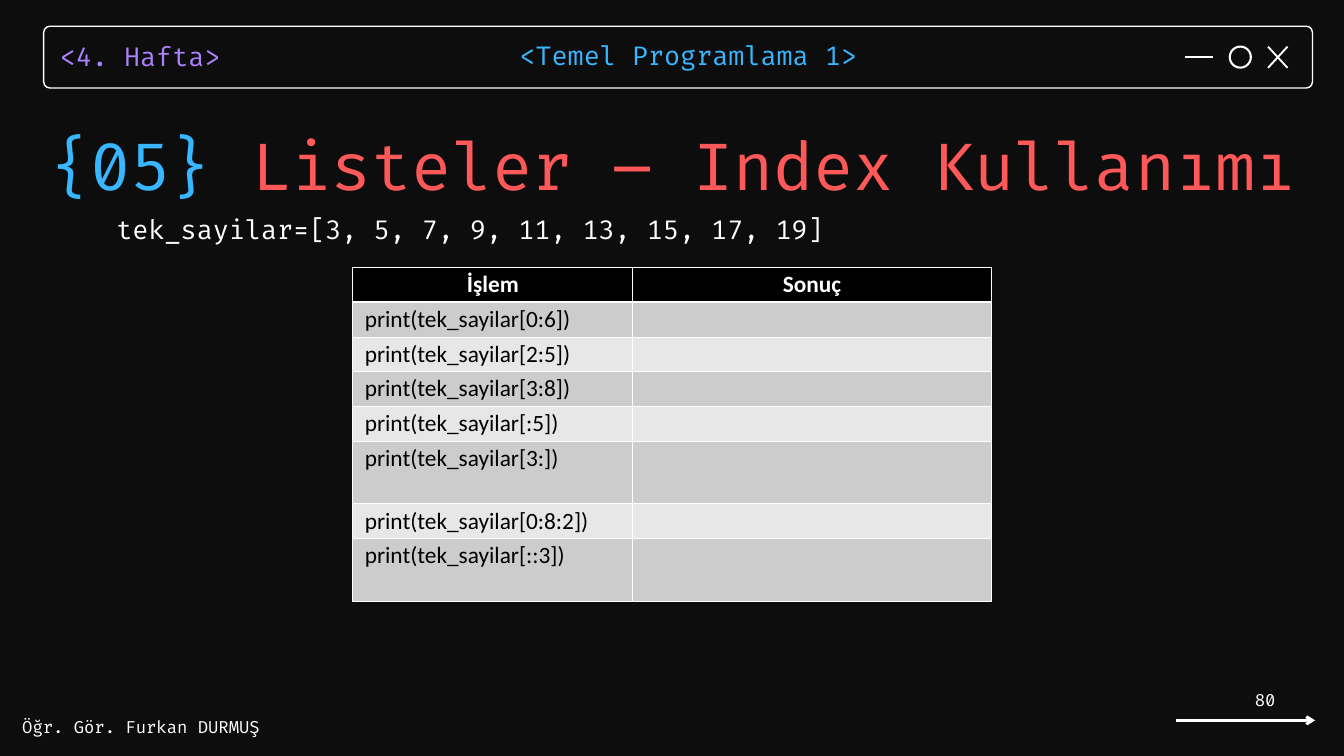
from lxml.etree import SubElement
from pptx import Presentation
from pptx.dml.color import RGBColor
from pptx.enum.shapes import MSO_CONNECTOR, MSO_SHAPE
from pptx.enum.text import MSO_ANCHOR, PP_ALIGN
from pptx.oxml.ns import qn
from pptx.util import Pt

BACKGROUND = RGBColor(0x0D, 0x0D, 0x0D)
WHITE = RGBColor(0xFF, 0xFF, 0xFF)
BLACK = RGBColor(0x00, 0x00, 0x00)
BLUE = RGBColor(0x38, 0xB6, 0xFF)
PURPLE = RGBColor(0xAB, 0x81, 0xFF)
RED = RGBColor(0xFF, 0x58, 0x58)
DARK_BAND = RGBColor(0xCC, 0xCC, 0xCC)
LIGHT_BAND = RGBColor(0xE7, 0xE7, 0xE7)


class SlideBuilder:
    code_font = "Fira Code"
    table_font = "Calibri"
    table_size = 25

    def __init__(self, slide):
        self.slide = slide
        slide.background.fill.solid()
        slide.background.fill.fore_color.rgb = BACKGROUND

    def text(self, left, top, width, height, runs, size,
             spacing=None, align=PP_ALIGN.LEFT, anchor=MSO_ANCHOR.TOP):
        """Add one line of text; runs holds (text, colour) pairs."""
        shape = self.slide.shapes.add_textbox(Pt(left), Pt(top), Pt(width), Pt(height))
        frame = shape.text_frame
        frame.word_wrap = True
        frame.vertical_anchor = anchor
        frame.margin_left = frame.margin_right = 0
        frame.margin_top = frame.margin_bottom = 0
        paragraph = frame.paragraphs[0]
        paragraph.alignment = align
        if spacing:
            paragraph.line_spacing = Pt(spacing)
        paragraph.font.name = self.code_font
        paragraph.font.size = Pt(size)
        for content, color in runs:
            run = paragraph.add_run()
            run.text = content
            run.font.color.rgb = color

    def outline(self, kind, left, top, width, height, weight):
        shape = self.slide.shapes.add_shape(kind, Pt(left), Pt(top), Pt(width), Pt(height))
        shape.shadow.inherit = False
        shape.fill.background()
        shape.line.color.rgb = WHITE
        shape.line.width = Pt(weight)
        return shape

    def line(self, x1, y1, x2, y2, weight, arrow=False):
        connector = self.slide.shapes.add_connector(
            MSO_CONNECTOR.STRAIGHT, Pt(x1), Pt(y1), Pt(x2), Pt(y2))
        connector.line.color.rgb = WHITE
        connector.line.width = Pt(weight)
        if arrow:
            SubElement(connector.line._get_or_add_ln(), qn("a:tailEnd"), type="arrow")
        SubElement(connector._element.spPr, qn("a:effectLst"))

    def cell(self, cell, content, fill, header, weights):
        """Fill a table cell; weights are left, right, top and bottom borders."""
        properties = cell._tc.get_or_add_tcPr()
        for side, weight in zip("LRTB", weights):
            border = SubElement(properties, qn(f"a:ln{side}"), w=str(Pt(weight)))
            color = SubElement(SubElement(border, qn("a:solidFill")), qn("a:srgbClr"))
            color.set("val", str(WHITE))
        cell.fill.solid()
        cell.fill.fore_color.rgb = fill
        cell.margin_left = Pt(7.2 if header else 12.85)
        cell.margin_top = cell.margin_bottom = Pt(3.3)
        cell.text = content
        paragraph = cell.text_frame.paragraphs[0]
        paragraph.alignment = PP_ALIGN.CENTER if header else PP_ALIGN.LEFT
        paragraph.font.name = self.table_font
        paragraph.font.size = Pt(self.table_size)
        paragraph.font.bold = header
        paragraph.font.color.rgb = WHITE if header else BLACK

    def table(self, left, top, widths, heights, rows):
        table = self.slide.shapes.add_table(
            len(rows), len(widths), Pt(left), Pt(top),
            Pt(sum(widths)), Pt(sum(heights))).table
        for column, width in zip(table.columns, widths):
            column.width = Pt(width)
        for index, (row, height) in enumerate(zip(rows, heights)):
            table.rows[index].height = Pt(height)
            header = index == 0
            fill = BLACK if header else (DARK_BAND if index % 2 else LIGHT_BAND)
            weights = (1, 1, 3 if index == 1 else 1, 3 if header else 1)
            for position, content in enumerate(row):
                self.cell(table.cell(index, position), content, fill, header, weights)


def main():
    presentation = Presentation()
    presentation.slide_width, presentation.slide_height = Pt(1440), Pt(810)
    builder = SlideBuilder(presentation.slides.add_slide(presentation.slide_layouts[6]))

    # Window bar with its buttons
    frame = builder.outline(MSO_SHAPE.ROUNDED_RECTANGLE, 46.8, 28.1, 1359.4, 66.2, 1.5)
    frame.adjustments[0] = 0.1
    builder.line(1358.6, 50, 1379.5, 72.7, 2)
    builder.line(1379.5, 50, 1358.6, 72.7, 2)
    builder.line(1270, 61.2, 1299.6, 61.2, 2)
    builder.outline(MSO_SHAPE.OVAL, 1317.6, 49.9, 22.6, 22.6, 2.25)
    builder.text(64.1, 37.4, 244.8, 38.2, [("<4. Hafta>", PURPLE)], 28, 39.2)
    builder.text(556.6, 36.7, 380.9, 38.2, [("<Temel Programlama 1>", BLUE)], 28, 39.2)

    # Title and the list it works on
    builder.text(54, 115.9, 1386, 98.6,
                 [("{05}", BLUE), (" Listeler – Index Kullanımı", RED)], 70, 102.6)
    builder.text(124.8, 228.2, 1233.8, 33.8,
                 [("tek_sayilar=[3, 5, 7, 9, 11, 13, 15, 17, 19]", WHITE)], 28,
                 align=PP_ALIGN.JUSTIFY)

    # Slicing table with room for the results
    slices = ["0:6", "2:5", "3:8", ":5", "3:", "0:8:2", "::3"]
    tall_slices = ["3:", "::3"]
    rows = [("İşlem", "Sonuç")] + [(f"print(tek_sayilar[{part}])", "") for part in slices]
    heights = [37.2] + [67.2 if part in tall_slices else 37.2 for part in slices]
    builder.table(378, 286.6, [300, 384], heights, rows)

    # Footer
    builder.text(23.8, 768.2, 264.2, 21.6, [("Öğr. Gör. Furkan DURMUŞ", WHITE)], 18)
    builder.text(1206, 735.1, 160.6, 28.8, [("80", WHITE)], 18,
                 align=PP_ALIGN.RIGHT, anchor=MSO_ANCHOR.MIDDLE)
    builder.line(1260, 771.8, 1409, 771.8, 3, arrow=True)

    presentation.save("out.pptx")


if __name__ == "__main__":
    main()
